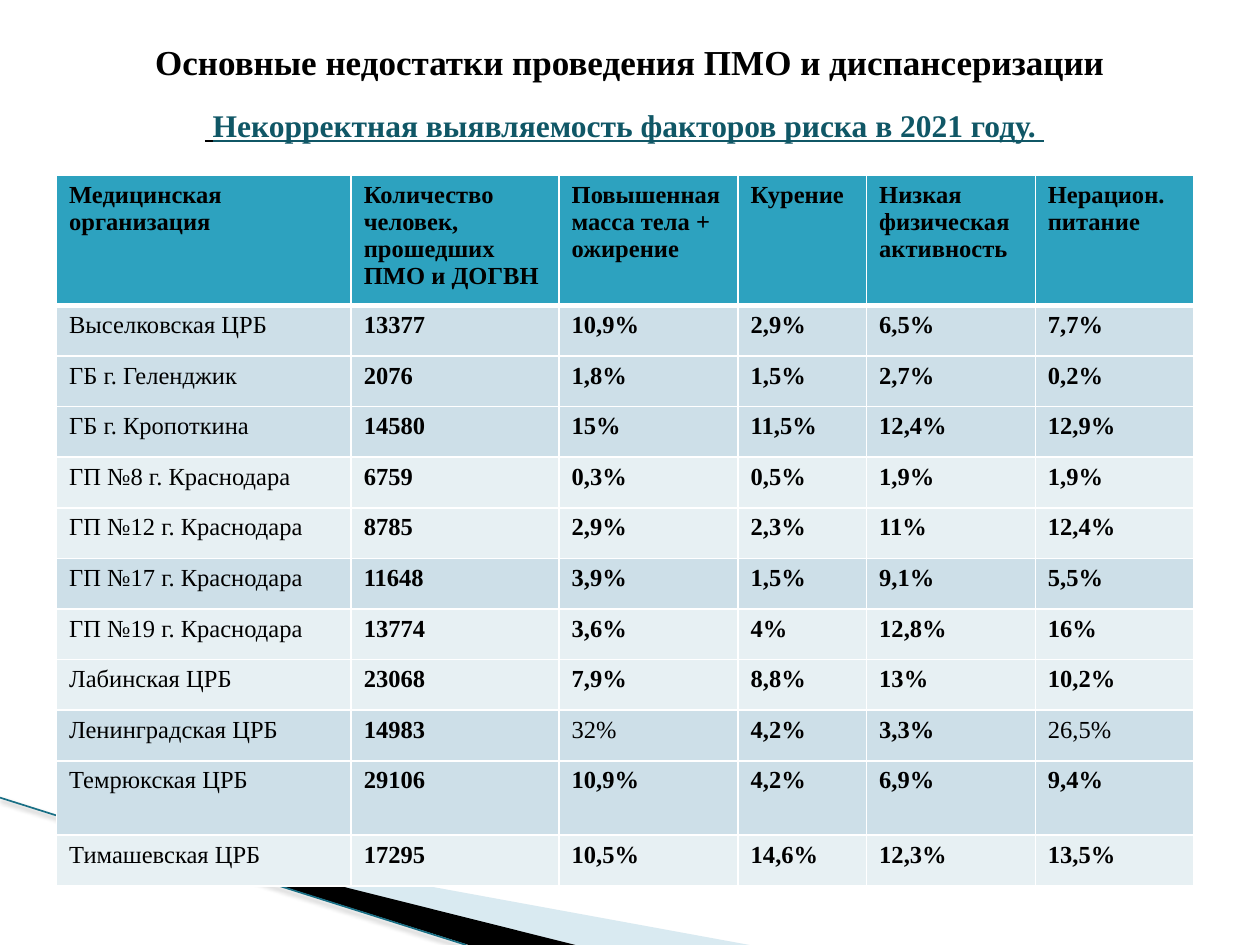
from lxml import etree
from pptx import Presentation
from pptx.dml.color import RGBColor
from pptx.enum.shapes import MSO_CONNECTOR
from pptx.enum.text import MSO_ANCHOR, PP_ALIGN
from pptx.oxml import parse_xml
from pptx.oxml.ns import nsdecls, qn
from pptx.util import Cm, Pt

STRAIGHT = MSO_CONNECTOR.STRAIGHT
MIDDLE = MSO_ANCHOR.MIDDLE
CENTER = PP_ALIGN.CENTER
JUSTIFY = PP_ALIGN.JUSTIFY

FONT = "Times New Roman"
BLACK, WHITE, TEAL = "000000", "FFFFFF", "105766"
HEADER, DARK_ROW, LIGHT_ROW = "2DA2BF", "CDDFE8", "E7F0F3"
THIN, THICK = 0.96, 3

COLUMN_WIDTHS = [5.94, 4.19, 3.61, 2.59, 3.4, 3.2]
HEADINGS = [
    "Медицинская организация",
    "Количество человек, прошедших ПМО и ДОГВН",
    "Повышенная масса тела + ожирение",
    "Курение",
    "Низкая\nфизическая активность",
    "Нерацион.\nпитание",
]
CLINICS = [
    (DARK_ROW, ["Выселковская ЦРБ", "13377", "10,9%", "2,9%", "6,5%", "7,7%"]),
    (DARK_ROW, ["ГБ г. Геленджик", "2076", "1,8%", "1,5%", "2,7%", "0,2%"]),
    (DARK_ROW, ["ГБ г. Кропоткина", "14580", "15%", "11,5%", "12,4%", "12,9%"]),
    (LIGHT_ROW, ["ГП №8 г. Краснодара", "6759", "0,3%", "0,5%", "1,9%", "1,9%"]),
    (LIGHT_ROW, ["ГП №12 г. Краснодара", "8785", "2,9%", "2,3%", "11%", "12,4%"]),
    (DARK_ROW, ["ГП №17 г. Краснодара", "11648", "3,9%", "1,5%", "9,1%", "5,5%"]),
    (LIGHT_ROW, ["ГП №19 г. Краснодара", "13774", "3,6%", "4%", "12,8%", "16%"]),
    (LIGHT_ROW, ["Лабинская ЦРБ", "23068", "7,9%", "8,8%", "13%", "10,2%"]),
    (DARK_ROW, ["Ленинградская ЦРБ", "14983", "32%", "4,2%", "3,3%", "26,5%"]),
    (DARK_ROW, ["Темрюкская ЦРБ", "29106", "10,9%", "4,2%", "6,9%", "9,4%"]),
    (LIGHT_ROW, ["Тимашевская ЦРБ", "17295", "10,5%", "14,6%", "12,3%", "13,5%"]),
]
REGULAR_VALUES = {"32%", "26,5%"}
TALL_CLINIC = "Темрюкская ЦРБ"


def rgb(value):
    return RGBColor.from_string(value)


def place(shape, left, top, width, height):
    shape.left, shape.top = Cm(left), Cm(top)
    shape.width, shape.height = Cm(width), Cm(height)


def add_run(paragraph, text, size, color=BLACK, bold=False, underline=False):
    run = paragraph.add_run()
    run.text = text
    run.font.name = FONT
    run.font.size = Pt(size)
    run.font.bold = bold
    run.font.underline = underline
    run.font.color.rgb = rgb(color)


def add_wedge(slide, points, color, opacity=100):
    corners = [(Cm(x), Cm(y)) for x, y in points]
    builder = slide.shapes.build_freeform(*corners[0], scale=1.0)
    builder.add_line_segments(corners[1:], close=True)
    wedge = builder.convert_to_shape()
    wedge.shadow.inherit = False
    wedge.fill.solid()
    wedge.fill.fore_color.rgb = rgb(color)
    wedge.line.fill.background()
    if opacity < 100:
        tint = wedge.fill._xPr.find(qn("a:solidFill"))[0]
        etree.SubElement(tint, qn("a:alpha"), val=str(opacity * 1000))


def add_edge(slide, start, end, color):
    edge = slide.shapes.add_connector(STRAIGHT, *map(Cm, start + end))
    edge.line.color.rgb = rgb(color)
    edge.line.width = Pt(0.95)
    edge._element.spPr.append(parse_xml(
        f'<a:effectLst {nsdecls("a")}>'
        f'<a:outerShdw blurRad="{Pt(3.1)}" dist="{Pt(1.6)}" dir="5400000">'
        f'<a:srgbClr val="{BLACK}"><a:alpha val="38000"/></a:srgbClr>'
        '</a:outerShdw></a:effectLst>'))


def add_subtitle(slide):
    box = slide.shapes.add_textbox(Cm(2.31), Cm(2.01), Cm(20.4), Cm(11.61))
    box.text_frame.word_wrap = True
    paragraph = box.text_frame.paragraphs[0]
    paragraph.alignment = JUSTIFY
    properties = paragraph._p.get_or_add_pPr()
    properties.set("marL", str(Cm(0.3)))
    properties.set("indent", "0")
    add_run(paragraph, "\t", 18)
    add_run(paragraph, " ", 18, bold=True, underline=True)
    add_run(paragraph, "Некорректная выявляемость факторов риска в 2021 году. ",
            18, TEAL, bold=True, underline=True)


def set_title(slide):
    title = slide.shapes.title
    place(title, 1.27, 0.13, 22.86, 2.21)
    title.text_frame.vertical_anchor = MIDDLE
    title.text_frame.word_wrap = True
    paragraph = title.text_frame.paragraphs[0]
    paragraph.alignment = CENTER
    add_run(paragraph, "Основные недостатки проведения ПМО и диспансеризации",
            20, bold=True)


def set_borders(cell, top, bottom):
    properties = cell._tc.get_or_add_tcPr()
    for side, width in zip("LRTB", (THIN, THIN, top, bottom)):
        properties.append(parse_xml(
            f'<a:ln{side} {nsdecls("a")} w="{Pt(width)}"><a:solidFill>'
            f'<a:srgbClr val="{WHITE}"/></a:solidFill></a:ln{side}>'))


def fill_cell(cell, text, color, bold, top=THIN, bottom=THIN):
    set_borders(cell, top, bottom)
    cell.fill.solid()
    cell.fill.fore_color.rgb = rgb(color)
    frame = cell.text_frame
    for index, line in enumerate(text.split("\n")):
        paragraph = frame.add_paragraph() if index else frame.paragraphs[0]
        add_run(paragraph, line, 14, bold=bold)


def add_risk_table(slide):
    heights = [2.59] + [1.5 if values[0] == TALL_CLINIC else 1.02
                        for _, values in CLINICS]
    table = slide.shapes.add_table(
        len(heights), len(COLUMN_WIDTHS), Cm(1.14), Cm(3.53),
        Cm(sum(COLUMN_WIDTHS)), Cm(sum(heights))).table
    table.horz_banding = False
    for column, width in zip(table.columns, COLUMN_WIDTHS):
        column.width = Cm(width)
    for row, height in zip(table.rows, heights):
        row.height = Cm(height)
    for column, heading in enumerate(HEADINGS):
        fill_cell(table.cell(0, column), heading, HEADER, True, bottom=THICK)
    for row, (color, values) in enumerate(CLINICS, start=1):
        for column, value in enumerate(values):
            bold = column > 0 and value not in REGULAR_VALUES
            fill_cell(table.cell(row, column), value, color, bold,
                      top=THICK if row == 1 else THIN)


def main():
    deck = Presentation()
    deck.slide_width, deck.slide_height = Cm(25.4), Cm(19.05)
    slide = deck.slides.add_slide(deck.slide_layouts[5])
    add_wedge(slide, [(1.4, 16.54), (15.11, 19.05), (11.58, 19.05), (1.4, 16.51)],
              "A0CBDC", opacity=40)
    add_wedge(slide, [(1.35, 16.48), (11.6, 19.05), (9.45, 19.05), (1.37, 16.51)],
              BLACK)
    add_edge(slide, (0, 16.08), (9.4, 19.05), "196F85")
    add_subtitle(slide)
    set_title(slide)
    add_risk_table(slide)
    deck.save("out.pptx")


if __name__ == "__main__":
    main()
